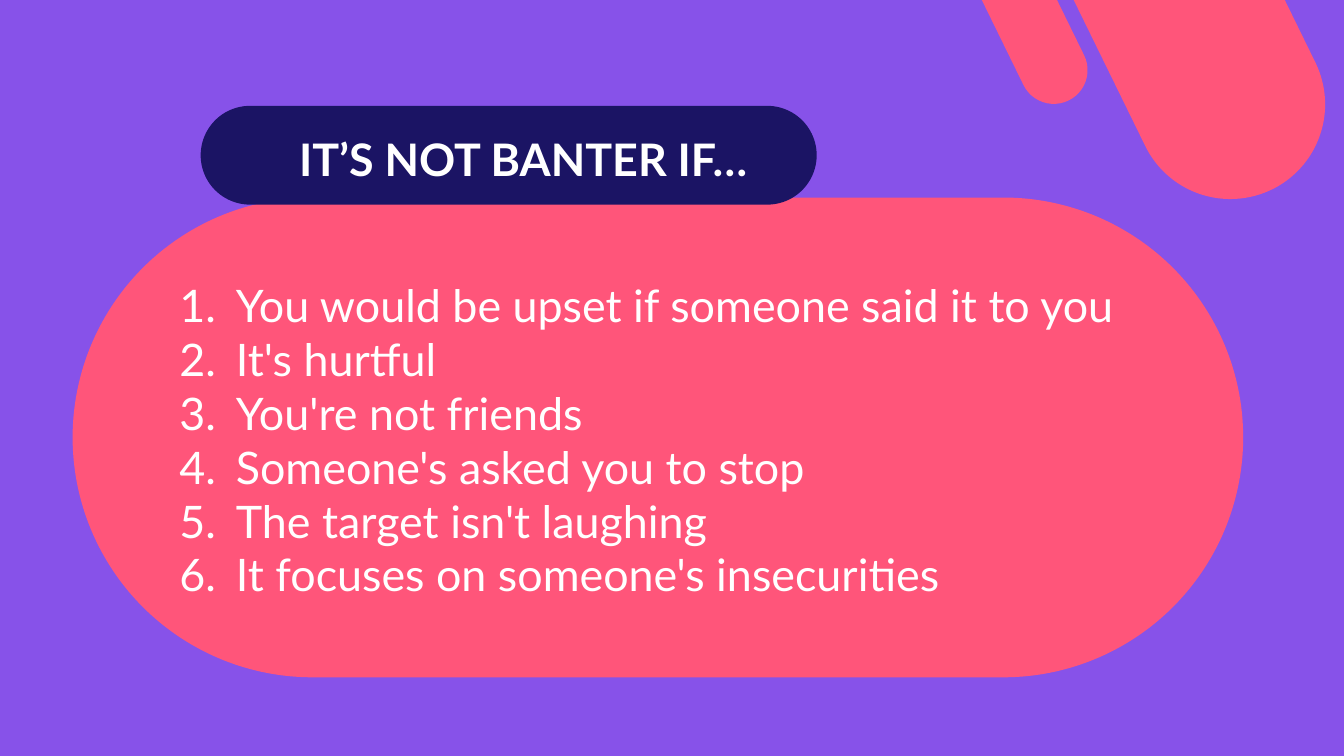
"""Build the slide that lists when a joke is not banter."""
from lxml.etree import SubElement as Sub
from pptx import Presentation
from pptx.dml.color import RGBColor
from pptx.enum.shapes import MSO_SHAPE as Shape
from pptx.enum.text import MSO_ANCHOR as Anchor, MSO_AUTO_SIZE as Auto, PP_ALIGN as Align
from pptx.oxml.ns import qn
from pptx.util import Inches, Pt

PURPLE = RGBColor(0x87, 0x52, 0xE9)
PINK = RGBColor(0xFF, 0x55, 0x7A)
NAVY = RGBColor(0x1B, 0x14, 0x64)
WHITE = RGBColor(0xFF, 0xFF, 0xFF)
FONT = "Lato"

PILLS = [
    (0.72, 1.96, 11.61, 4.76, 0, PINK),
    (10.55, -2.98, 1.88, 5.12, 153.9, PINK),
    (9.43, -2.6, 0.67, 3.79, 153.9, PINK),
    (1.99, 1.05, 6.11, 0.98, 0, NAVY),
]
SIGNS = [
    "You would be upset if someone said it to you",
    "It's hurtful",
    "You're not friends",
    "Someone's asked you to stop",
    "The target isn't laughing",
    "It focuses on someone's insecurities",
]


def place(holder, left, top, width, height):
    holder.left, holder.top = Inches(left), Inches(top)
    holder.width, holder.height = Inches(width), Inches(height)
    slide.shapes._spTree.append(holder._element)
    frame = holder.text_frame
    frame.word_wrap = True
    frame.auto_size = Auto.NONE
    frame.vertical_anchor = Anchor.TOP
    return frame


def style(para, bold):
    font = para.font
    font.name, font.size, font.bold = FONT, Pt(32), bold
    font.color.rgb = WHITE


prs = Presentation()
prs.slide_width, prs.slide_height = Inches(13.33), Inches(7.5)
slide = prs.slides.add_slide(prs.slide_layouts[1])
slide.background.fill.solid()
slide.background.fill.fore_color.rgb = PURPLE

for left, top, width, height, turn, color in PILLS:
    pill = slide.shapes.add_shape(
        Shape.ROUNDED_RECTANGLE, Inches(left), Inches(top), Inches(width), Inches(height)
    )
    pill.adjustments[0] = 0.5
    pill.rotation = turn
    pill.shadow.inherit = False
    pill.fill.solid()
    pill.fill.fore_color.rgb = color
    pill.line.fill.background()

title, body = slide.placeholders
head = place(title, 0.67, 1.26, 9.04, 0.64)
head.text = "IT’S NOT BANTER IF…"
head.paragraphs[0].alignment = Align.CENTER
style(head.paragraphs[0], True)

points = place(body, 1.68, 2.71, 10.66, 3.33)
points.text = "\n".join(SIGNS)
for para in points.paragraphs:
    para.space_before = Pt(0)
    props = para._p.get_or_add_pPr()
    props.set("marL", str(Inches(0.56)))
    props.set("indent", str(-Inches(0.56)))
    Sub(props, qn("a:buFont"), typeface=FONT)
    Sub(props, qn("a:buAutoNum"), type="arabicPeriod")
    style(para, False)

prs.save("out.pptx")
